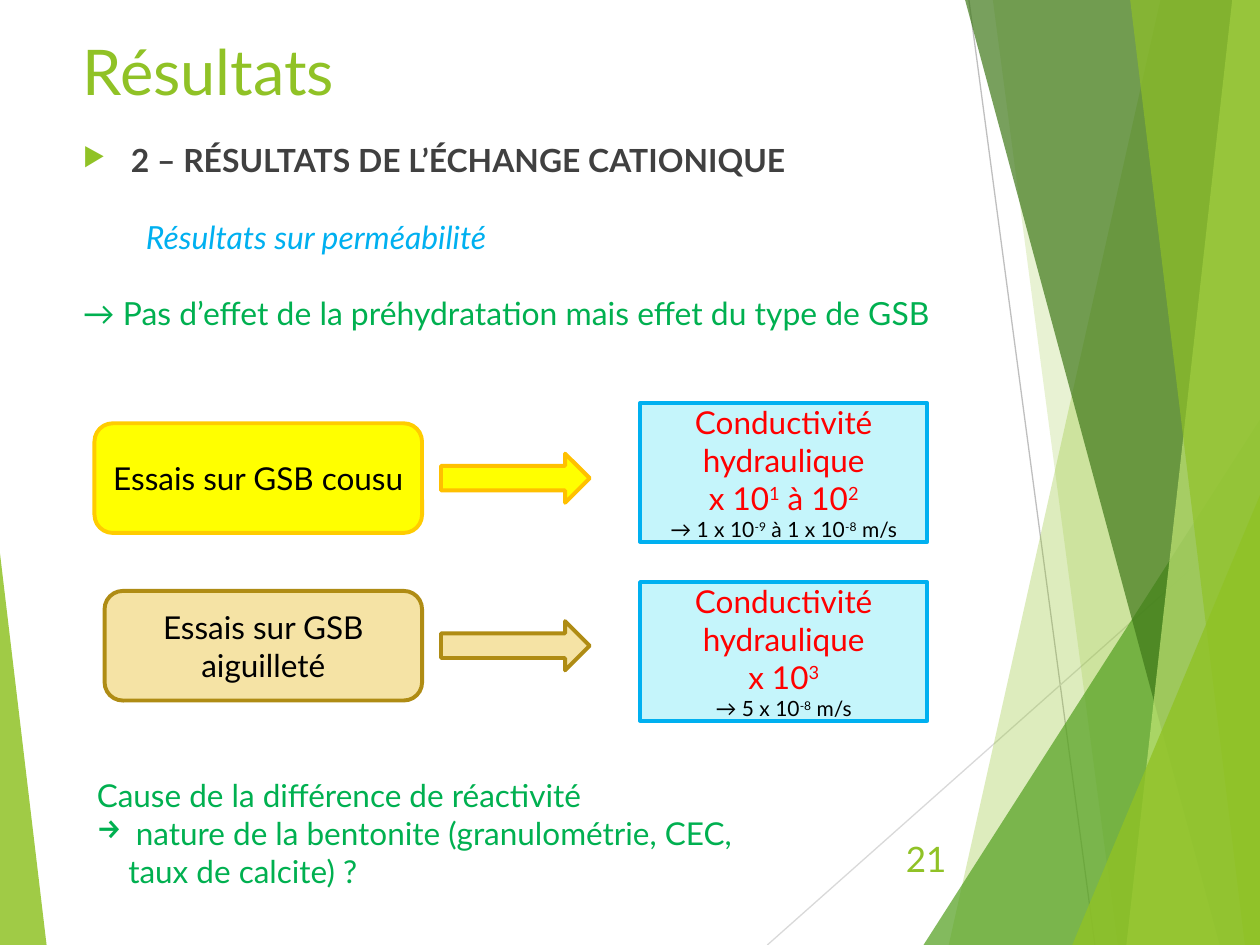
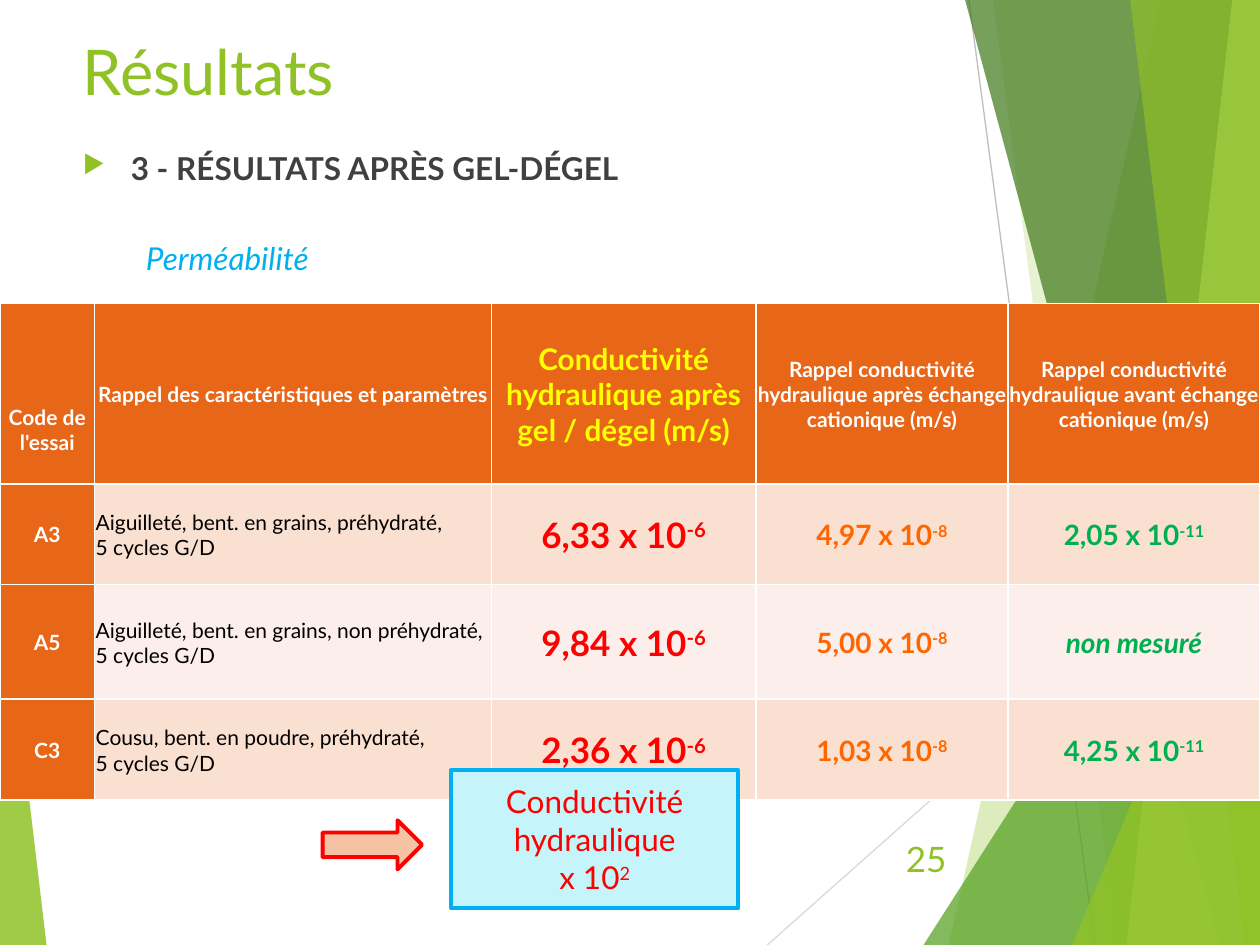
import pptx
import pptx.util
import pptx.dml.color
import pptx.enum.shapes
import pptx.enum.text
import pptx.oxml
import pptx.oxml.ns

Inches, Pt = pptx.util.Inches, pptx.util.Pt
Shape = pptx.enum.shapes.MSO_SHAPE
Align = pptx.enum.text.PP_ALIGN
Anchor = pptx.enum.text.MSO_ANCHOR
qn = pptx.oxml.ns.qn
NAMESPACE = 'xmlns:a="http://schemas.openxmlformats.org/drawingml/2006/main"'

# Shared look
FONT = "Lato"
COLORS = {
    "lime": "90C226", "green": "54A021", "forest": "3F7819", "pale_lime": "C0E474",
    "rule": "BFBFBF", "light_rule": "D9D9D9", "ink": "404040", "black": "000000",
    "white": "FFFFFF", "sky": "00B0F0", "emerald": "00B050", "red": "FF0000",
    "yellow": "FFFF00", "gold": "FFCC00", "amber": "FFC000", "sand": "F5E3A5",
    "bronze": "AF8C14", "ice": "C5F5FB", "peach": "F5C2A3", "orange": "E76618",
    "bright_orange": "FF6600", "band": "FAE0D1", "light_band": "FBEEEB",
}
RULES = [((7.69, 0), (8.69, 7.5), "rule"), ((10, 4.03), (6.09, 7.5), "light_rule")]
# Bands run to the right edge: (top x, bottom x, color, opacity %)
# Triangles: (left, top, width, height, apex, color, opacity %)
DECOR = [
    (9.21, 7.53, "lime", 30),
    (7.88, 8.87, "lime", 20),
    (7.33, 3.33, 2.67, 4.17, 1, "green", 72),
    (7.66, 9.68, "forest", 70),
    (9.78, 8.94, "pale_lime", 70),
    (8.97, 9.88, "lime", 65),
    (8.51, 3.93, 1.49, 3.57, 1, "lime", 80),
    (0, 4.39, 0.37, 3.11, 0, "lime", 85),
]

# Slide content; text between carets is superscript
TITLE = "Résultats"
CATION = {
    "number": "21", "size": 18.2, "spacing": 1,
    "heading": "2 – RÉSULTATS DE L’ÉCHANGE CATIONIQUE",
    "topic": "Résultats sur perméabilité",
    "finding": "→ Pas d’effet de la préhydratation mais effet du type de GSB",
}
FROST = {
    "number": "25", "size": 18, "spacing": 1.2,
    "heading": "3 - RÉSULTATS APRÈS GEL-DÉGEL",
    "topic": "Perméabilité",
}
CONDUCTIVITY = "Conductivité hydraulique"
TESTS = [
    {"name": "Essais sur GSB cousu", "left": 0.75, "top": 3.36, "result_top": 3.2,
     "fill": "yellow", "line": "gold", "arrow_line": "amber",
     "factor": "x 10^1^ à 10^2^", "range": "→ 1 x 10^-9^ à 1 x 10^-8^ m/s"},
    {"name": "Essais sur GSB aiguilleté", "left": 0.83, "top": 4.69, "result_top": 4.62,
     "fill": "sand", "line": "bronze", "arrow_line": "bronze",
     "factor": "x 10^3^", "range": "→ 5 x 10^-8^ m/s"},
]
TESTS_RIGHT = 3.35
CAUSE = ["Cause de la différence de réactivité",
         "nature de la bentonite (granulométrie, CEC,",
         "taux de calcite) ?"]
HEADERS = [
    "Code de l'essai",
    "Rappel des caractéristiques et paramètres",
    "Conductivité hydraulique après gel / dégel (m/s)",
    "Rappel conductivité hydraulique après échange cationique (m/s)",
    "Rappel conductivité hydraulique avant échange cationique (m/s)",
]
UNMEASURED = "non mesuré"
ROWS = [
    ("A3", "Aiguilleté, bent. en grains, préhydraté,\n5 cycles G/D",
     "6,33 x 10^-6^", "4,97 x 10^-8^", "2,05 x 10^-11^"),
    ("A5", "Aiguilleté, bent. en grains, non préhydraté, 5 cycles G/D",
     "9,84 x 10^-6^", "5,00 x 10^-8^", UNMEASURED),
    ("C3", "Cousu, bent. en poudre, préhydraté,\n5 cycles G/D",
     "2,36 x 10^-6^", "1,03 x 10^-8^", "4,25 x 10^-11^"),
]
COLUMN_WIDTHS = [0.75, 3.15, 2.1, 2, 2]
ROW_HEIGHTS = [0.56, 0.87, 0.8, 0.91, 0.8]
# Body columns: size, color, bold, alignment
COLUMN_STYLES = [
    (12, "white", True, Align.CENTER), (12, "black", False, Align.LEFT),
    (20, "red", True, Align.CENTER), (16, "bright_orange", True, Align.CENTER),
    (16, "emerald", True, Align.CENTER),
]


def rgb(name):
    return pptx.dml.color.RGBColor.from_string(COLORS[name])


def xml(markup):
    return pptx.oxml.parse_xml(markup.replace(" ", f" {NAMESPACE} ", 1))


# Text
def write(para, text, size, color, bold=False, italic=False, align=Align.LEFT):
    para.alignment = align
    for index, piece in enumerate(text.split("^")):
        if not piece:
            continue
        span = para.add_run()
        span.text = piece
        span.font.name, span.font.size = FONT, Pt(size)
        span.font.bold, span.font.italic = bold, italic
        span.font.color.rgb = rgb(color)
        if index % 2:
            span._r.get_or_add_rPr().set("baseline", "30000")


def next_para(frame):
    first = frame.paragraphs[0]
    return frame.add_paragraph() if first.runs else first


def indent(para, left, first=0):
    properties = para._p.get_or_add_pPr()
    properties.set("marL", str(Inches(left)))
    properties.set("indent", str(Inches(first)))
    return properties


def add_text_box(page, left, top, width, height):
    box = page.shapes.add_textbox(Inches(left), Inches(top), Inches(width), Inches(height))
    box.text_frame.word_wrap = True
    return box.text_frame


# Shapes
def paint(shape, fill, line=None, opacity=100):
    shape.shadow.inherit = False
    shape.fill.solid()
    shape.fill.fore_color.rgb = rgb(fill)
    if opacity < 100:
        tint = shape._element.spPr.find(qn("a:solidFill"))[0]
        tint.append(xml(f'<a:alpha val="{opacity * 1000}"/>'))
    if line:
        shape.line.color.rgb = rgb(line)
        shape.line.width = Pt(2.25)
        shape.line._get_or_add_ln().append(xml("<a:round />"))
    else:
        shape.line.fill.background()


def add_shape(page, kind, left, top, width, height, fill, line=None, opacity=100):
    shape = page.shapes.add_shape(kind, Inches(left), Inches(top), Inches(width), Inches(height))
    paint(shape, fill, line, opacity)
    shape.text_frame.word_wrap = True
    shape.text_frame.vertical_anchor = Anchor.MIDDLE
    return shape


def add_result(page, left, top, factor, note=None):
    frame = add_shape(page, Shape.RECTANGLE, left, top, 2.28, 1.1, "ice", "sky").text_frame
    for text in (CONDUCTIVITY, factor):
        write(next_para(frame), text, 18, "red", align=Align.CENTER)
    if note:
        write(next_para(frame), note, 12, "black", align=Align.CENTER)


# Background, title, headings and page number
def add_background(page):
    for start, end, color in RULES:
        rule = page.shapes.add_connector(pptx.enum.shapes.MSO_CONNECTOR.STRAIGHT,
                                         *map(Inches, start + end))
        rule.line.color.rgb = rgb(color)
        rule.line.width = Pt(0.75)
        rule._element.spPr.append(xml("<a:effectLst />"))
    for *place, color, opacity in DECOR:
        if len(place) == 2:
            top_x, bottom_x = place
            outline = page.shapes.build_freeform(Inches(top_x), 0)
            corners = [(10, 0), (10, 7.5), (bottom_x, 7.5)]
            outline.add_line_segments([(Inches(x), Inches(y)) for x, y in corners])
            paint(outline.convert_to_shape(), color, opacity=opacity)
        else:
            *box, apex = place
            triangle = add_shape(page, Shape.ISOSCELES_TRIANGLE, *box, color, opacity=opacity)
            triangle.adjustments[0] = apex


def add_page(deck, content):
    page = deck.slides.add_slide(deck.slide_layouts[6])
    add_background(page)
    write(add_text_box(page, 0.56, 0.21, 7.05, 1.34).paragraphs[0], TITLE, 36, "lime")

    frame = add_text_box(page, 0.56, 1.07, 7.59, 1.97)
    size, spacing = content["size"], content["spacing"]
    heading = frame.paragraphs[0]
    write(heading, content["heading"], size, "ink", bold=True)
    heading.line_spacing = spacing
    properties = indent(heading, 0.38, -0.38)
    properties.append(xml(f'<a:buClr ><a:srgbClr val="{COLORS["lime"]}"/></a:buClr>'))
    properties.append(xml('<a:buSzPct val="80000"/>'))
    properties.append(xml('<a:buChar char="▶"/>'))
    topic = frame.add_paragraph()
    write(topic, content["topic"], size, "sky", italic=True)
    indent(topic, 0.5)
    if "finding" in content:
        write(frame.add_paragraph(), content["finding"], size, "emerald")
    for para in frame.paragraphs[1:]:
        para.line_spacing = spacing
        para.space_before = Pt(round(size * 1.2 * spacing, 1))

    frame = add_text_box(page, 7.05, 6.61, 0.56, 0.4)
    frame.vertical_anchor = Anchor.MIDDLE
    write(frame.paragraphs[0], content["number"], 20, "lime", align=Align.RIGHT)
    return page


# Cation exchange: each test leads to its conductivity
def add_tests(page):
    for test in TESTS:
        box = add_shape(page, Shape.ROUNDED_RECTANGLE, test["left"], test["top"],
                        TESTS_RIGHT - test["left"], 0.87, test["fill"], test["line"])
        write(box.text_frame.paragraphs[0], test["name"], 18, "black", align=Align.CENTER)
        add_shape(page, Shape.RIGHT_ARROW, 3.5, test["top"] + 0.24, 1.18, 0.39,
                  test["fill"], test["arrow_line"])
        add_result(page, 5.08, test["result_top"], test["factor"], test["range"])

    frame = add_text_box(page, 0.67, 6.11, 6.77, 1.01)
    for text in CAUSE:
        write(next_para(frame), text, 18, "emerald")
    indent(frame.paragraphs[1], 0.31, -0.31).append(xml('<a:buChar char="→"/>'))
    indent(frame.paragraphs[2], 0.25)


# Freeze and thaw: table of conductivities
def set_borders(cell, hidden=None):
    properties = cell._tc.get_or_add_tcPr()
    for index, side in enumerate(("lnL", "lnR", "lnT", "lnB")):
        line = ("<a:noFill/>" if side == hidden else
                f'<a:solidFill><a:srgbClr val="{COLORS["white"]}"/></a:solidFill>')
        properties.insert(index, xml(f'<a:{side} w="12700">{line}</a:{side}>'))


def fill_cell(cell, text, fill, size, color, bold, align, italic=False):
    cell.fill.solid()
    cell.fill.fore_color.rgb = rgb(fill)
    cell.vertical_anchor = Anchor.MIDDLE
    cell.margin_left = cell.margin_right = cell.margin_top = Inches(0.01)
    cell.margin_bottom = 0
    for line in filter(None, text.split("\n")):
        write(next_para(cell.text_frame), line, size, color, bold, italic, align)


def add_measures(page):
    table = page.shapes.add_table(len(ROW_HEIGHTS), len(COLUMN_WIDTHS), 0, Inches(2.41),
                                  Inches(10), Inches(sum(ROW_HEIGHTS))).table
    for column, width in zip(table.columns, COLUMN_WIDTHS):
        column.width = Inches(width)
    for row, height in zip(table.rows, ROW_HEIGHTS):
        row.height = Inches(height)

    for column, text in enumerate(HEADERS):
        upper, lower = table.cell(0, column), table.cell(1, column)
        if column:
            upper.merge(lower)
        size, color = (17, "yellow") if column == 2 else (12, "white")
        for cell, words in ((upper, text if column else ""), (lower, "" if column else text)):
            fill_cell(cell, words, "orange", size, color, True, Align.CENTER)
        set_borders(upper, None if column else "lnB")
        set_borders(lower, "lnT")

    for index, values in enumerate(ROWS):
        band = "light_band" if index % 2 else "band"
        for column, (text, style) in enumerate(zip(values, COLUMN_STYLES)):
            cell = table.cell(index + 2, column)
            fill_cell(cell, text, band if column else "orange", *style,
                      italic=text == UNMEASURED)
            set_borders(cell)


def main():
    deck = pptx.Presentation()
    deck.slide_width, deck.slide_height = Inches(10), Inches(7.5)
    add_tests(add_page(deck, CATION))
    frost_page = add_page(deck, FROST)
    add_measures(frost_page)
    add_result(frost_page, 3.58, 6.11, "x 10^2^")
    add_shape(frost_page, Shape.RIGHT_ARROW, 2.56, 6.51, 0.79, 0.39, "peach", "red")
    deck.save("out.pptx")


if __name__ == "__main__":
    main()
